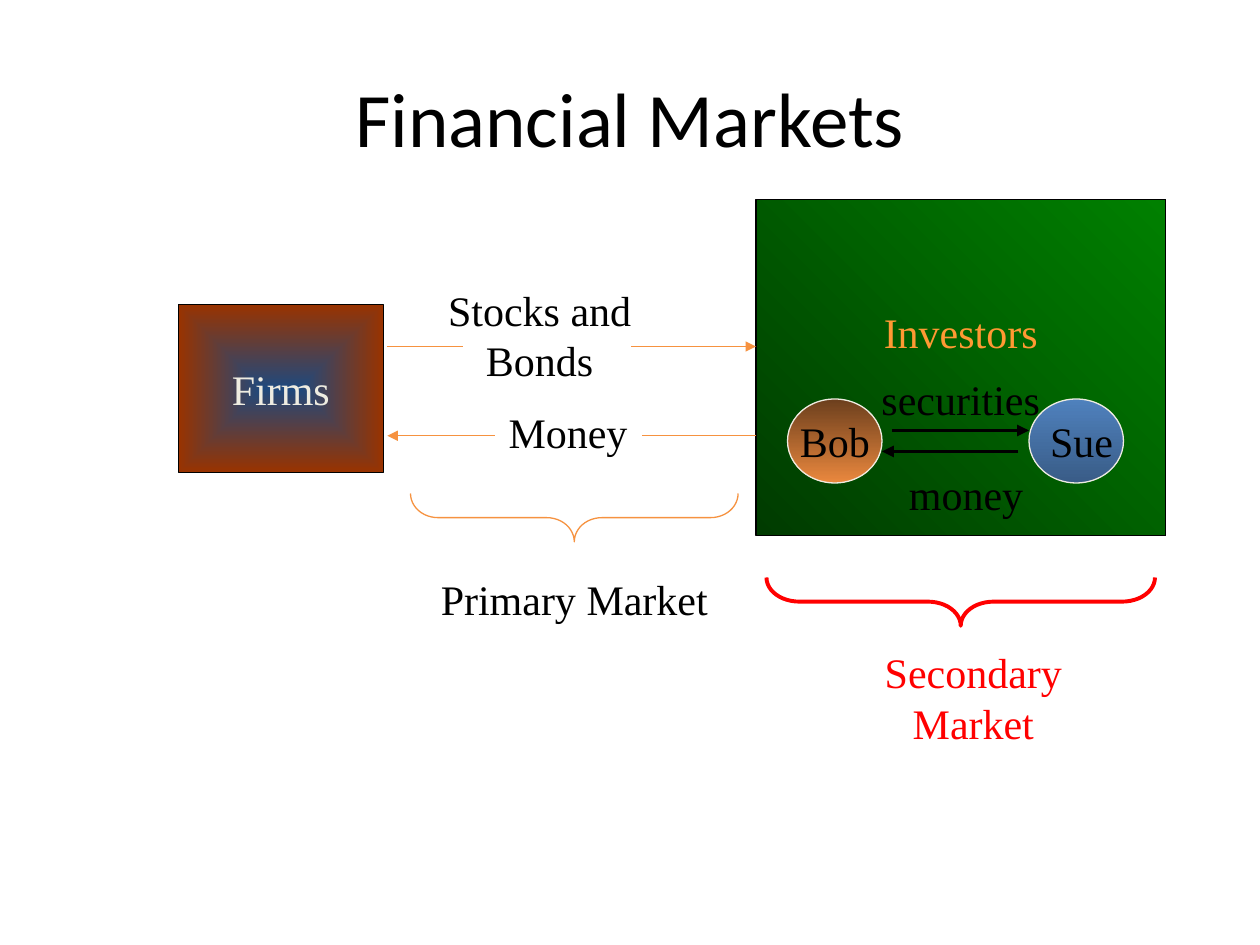
from lxml.etree import SubElement
from pptx import Presentation
from pptx.dml.color import RGBColor
from pptx.enum.shapes import MSO_CONNECTOR, MSO_SHAPE
from pptx.enum.text import MSO_ANCHOR, PP_ALIGN
from pptx.oxml.ns import qn
from pptx.util import Inches, Pt

COLS, ROWS = 120, 90
BLACK, ORANGE, RED, CREAM = "000000", "F69240", "FF0000", "EEECE1"
SERIF = "Times New Roman"

prs = Presentation()
prs.slide_width, prs.slide_height = Inches(10), Inches(7.5)


def col(n):
    """Return the length of n grid columns."""
    return round(prs.slide_width * n / COLS)


def row(n):
    """Return the length of n grid rows."""
    return round(prs.slide_height * n / ROWS)


def place(x, y, w, h):
    """Turn a box in grid units into lengths."""
    return col(x), row(y), col(w), row(h)


def rgb(color):
    """Turn a hex string into a colour."""
    return RGBColor.from_string(color)


def write(s, text, color=BLACK, size=24, font=SERIF, align=PP_ALIGN.CENTER):
    """Set and format the single paragraph of a shape."""
    tf = s.text_frame
    tf.word_wrap = True
    tf.text = text
    p = tf.paragraphs[0]
    p.alignment = align
    f = p.runs[0].font
    f.name, f.size, f.color.rgb = font, Pt(size), rgb(color)


def label(slide, box, text, color=BLACK, align=PP_ALIGN.CENTER):
    """Add a wrapped text box."""
    s = slide.shapes.add_textbox(*place(*box))
    write(s, text, color, align=align)


def outline(s, color, width):
    """Set the line of a shape or connector."""
    s.line.color.rgb, s.line.width = rgb(color), Pt(width)


def gradient_shape(slide, kind, box, colors, line, angle=None):
    """Add a shape with a linear gradient, or one from its centre if no angle is given."""
    s = slide.shapes.add_shape(kind, *place(*box))
    s.shadow.inherit = False
    outline(s, line, 0.75)
    s.fill.gradient()
    for stop, position, color in zip(s.fill.gradient_stops, (0, 1), colors):
        stop.position, stop.color.rgb = position, rgb(color)
    if angle is None:
        grad = s.fill._xPr.find(qn("a:gradFill"))
        grad.remove(grad.find(qn("a:lin")))
        centre = SubElement(grad, qn("a:path"), {"path": "shape"})
        SubElement(centre, qn("a:fillToRect"), dict.fromkeys("ltrb", "50000"))
    else:
        s.fill.gradient_angle = angle
    return s


def flow(slide, start, end, y, color, width=0.75, arrow=True):
    """Add a horizontal connector, with an arrowhead at its end if asked."""
    s = slide.shapes.add_connector(MSO_CONNECTOR.STRAIGHT, col(start), row(y), col(end), row(y))
    outline(s, color, width)
    if arrow:
        SubElement(s.line._get_or_add_ln(), qn("a:tailEnd"), {"type": "triangle"})
    SubElement(s._element.spPr, qn("a:effectLst"))


def brace(slide, box, color, width, curve):
    """Add a brace that fills a wide box and points down."""
    x, y, w, h = box
    turned = x + (w - h) / 2, y + (h - w) / 2, h, w
    s = slide.shapes.add_shape(MSO_SHAPE.LEFT_BRACE, *place(*turned))
    s.shadow.inherit = False
    s.rotation = 270
    s.adjustments[0] = curve
    s.fill.background()
    outline(s, color, width)


def title(slide, box, text):
    """Move and format the title placeholder."""
    s = slide.shapes.title
    s.left, s.top, s.width, s.height = place(*box)
    write(s, text, size=44, font="Calibri")
    s.text_frame.vertical_anchor = MSO_ANCHOR.MIDDLE


def firms(slide, box):
    """Draw the firms block."""
    s = gradient_shape(slide, MSO_SHAPE.RECTANGLE, box, ("1F497D", "993300"), BLACK)
    write(s, "Firms", CREAM)
    s.text_frame.vertical_anchor = MSO_ANCHOR.MIDDLE


def investors(slide, box):
    """Draw the investors block and the trade between two of them."""
    x, y, w, h = box
    s = gradient_shape(slide, MSO_SHAPE.RECTANGLE, box, ("003B00", "008000"), BLACK, 45)
    write(s, "Investors", "FF9933")
    s.text_frame.vertical_anchor = MSO_ANCHOR.TOP
    s.text_frame.margin_top = row(10.2)
    flow(slide, x + 25, x + 12, y + 24, BLACK, 2.25)
    label(slide, (x + 12, y + 25, 16, 6), "money")
    flow(slide, x + 13, x + 26, y + 22, BLACK, 2.25)
    label(slide, (x + 10, y + 16, 19, 6), "securities")
    people = (
        ("Bob", 3, 11, ("6C3F1D", "EA883E"), PP_ALIGN.LEFT),
        ("Sue", 26, 10, ("4F81BD", "395C87"), PP_ALIGN.CENTER),
    )
    for name, dx, width, colors, align in people:
        gradient_shape(slide, MSO_SHAPE.OVAL, (x + dx, y + 19, 9, 8), colors, CREAM, 270)
        label(slide, (x + dx, y + 20, width, 6), name, align=align)


def primary_market(slide, box):
    """Draw the exchange between firms and investors."""
    x, y, w, h = box
    right = x + w
    label(slide, (x + 3, y, 23, 11.4), "Stocks and Bonds")
    flow(slide, x, x + 7.2, y + 6.5, ORANGE, arrow=False)
    flow(slide, x + 23.2, right, y + 6.5, ORANGE)
    label(slide, (x + 9.4, y + 11.6, 15.6, 6.8), "Money")
    flow(slide, x + 10.2, x, y + 15, ORANGE)
    flow(slide, right, x + 24.2, y + 15, ORANGE, arrow=False)
    brace(slide, (x + 2.2, y + 20.5, 31.2, 4.6), ORANGE, 0.75, 0.57)
    label(slide, (x + 2.2, y + 27.5, 31.2, 6.8), "Primary Market")


def secondary_market(slide, box):
    """Draw the brace and caption below the investors."""
    x, y, w, h = box
    brace(slide, (x, y, w, 4.6), RED, 2.25, 0.68)
    label(slide, (x + 4.2, y + 6, 31, 10), "Secondary Market", RED)


def main():
    """Build and save the slide."""
    slide = prs.slides.add_slide(prs.slide_layouts[5])
    title(slide, (6, 3.6, 108, 15), "Financial Markets")
    firms(slide, (17, 29, 19.5, 16))
    investors(slide, (72, 19, 39, 32))
    secondary_market(slide, (73, 55, 37, 16))
    primary_market(slide, (36.9, 26.5, 35.1, 34.3))
    prs.save("out.pptx")


if __name__ == "__main__":
    main()
